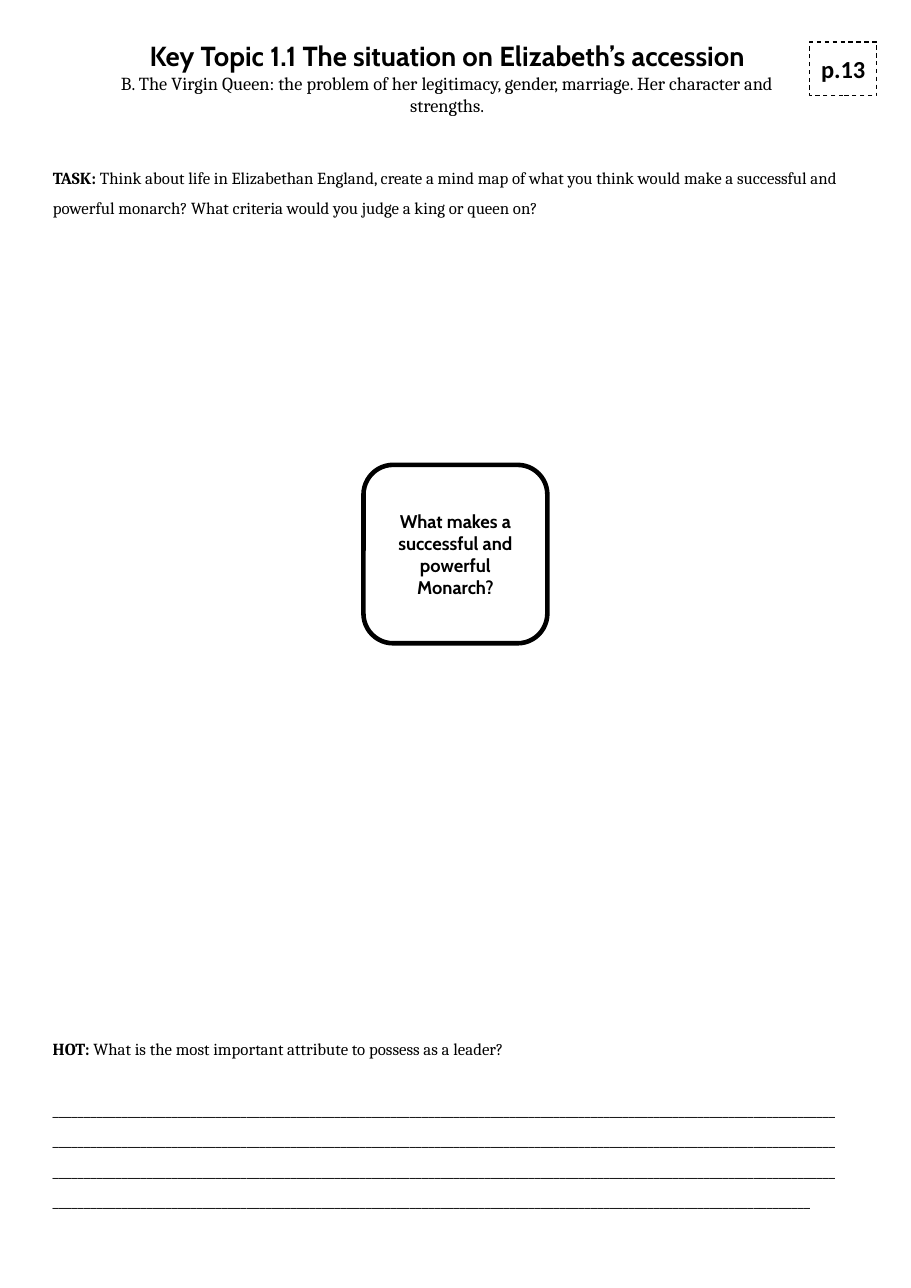
from dataclasses import dataclass

from pptx import Presentation
from pptx.dml.color import RGBColor
from pptx.enum.dml import MSO_LINE
from pptx.enum.shapes import MSO_SHAPE
from pptx.enum.text import MSO_ANCHOR, MSO_AUTO_SIZE, PP_ALIGN
from pptx.util import Pt

LEFT, CENTER = PP_ALIGN.LEFT, PP_ALIGN.CENTER
TOP, MIDDLE = MSO_ANCHOR.TOP, MSO_ANCHOR.MIDDLE
FIXED, GROW = MSO_AUTO_SIZE.NONE, MSO_AUTO_SIZE.SHAPE_TO_FIT_TEXT
RECT, ROUND = MSO_SHAPE.RECTANGLE, MSO_SHAPE.ROUNDED_RECTANGLE
DASH = MSO_LINE.DASH

TITLE_ONLY = 5
RULE_MARKS = 496


@dataclass(frozen=True)
class Theme:
    ink: RGBColor = RGBColor(0, 0, 0)
    paper: RGBColor = RGBColor(255, 255, 255)
    head: str = "Cabin"
    body: str = "Cambria"
    label: str = "Calibri"
    large: int = 18
    medium: int = 16
    normal: int = 12
    small: int = 11


def write(shape, paras, ink, align=LEFT, anchor=TOP, fit=FIXED, inset=None,
          spacing=None, gap=0):
    """Fill a shape with paragraphs, each a list of (text, font, size, bold)."""
    frame = shape.text_frame
    frame.word_wrap = True
    frame.auto_size = fit
    frame.vertical_anchor = anchor
    if inset is not None:
        frame.margin_left = frame.margin_right = Pt(inset)
        frame.margin_top = frame.margin_bottom = Pt(inset)
    for i, runs in enumerate(paras):
        para = frame.add_paragraph() if i else frame.paragraphs[0]
        para.alignment = align
        para.space_before = Pt(gap if i else 0)
        if spacing:
            para.line_spacing = spacing
        for text, name, size, bold in runs:
            run = para.add_run()
            run.text = text
            font = run.font
            font.name, font.size, font.bold = name, Pt(size), bold
            font.color.rgb = ink


class Sheet:
    def __init__(self, slide, theme):
        self.slide = slide
        self.theme = theme

    def title(self, box, paras):
        shape = self.slide.shapes.title
        shape.left, shape.top, shape.width, shape.height = map(Pt, box)
        write(shape, paras, self.theme.ink, align=CENTER, anchor=MIDDLE,
              inset=7.2)

    def text(self, box, paras, **style):
        shape = self.slide.shapes.add_textbox(*map(Pt, box))
        write(shape, paras, self.theme.ink, **style)

    def panel(self, kind, box, run, weight, dash=None, **style):
        shape = self.slide.shapes.add_shape(kind, *map(Pt, box))
        shape.shadow.inherit = False
        shape.fill.solid()
        shape.fill.fore_color.rgb = self.theme.paper
        shape.line.color.rgb = self.theme.ink
        shape.line.width = Pt(weight)
        if dash:
            shape.line.dash_style = dash
        write(shape, [[run]], self.theme.ink, align=CENTER, anchor=MIDDLE,
              **style)


def main():
    deck = Presentation()
    deck.slide_width, deck.slide_height = Pt(595.44), Pt(841.68)
    look = Theme()
    sheet = Sheet(deck.slides.add_slide(deck.slide_layouts[TITLE_ONLY]), look)

    def prompt(tag, text):
        return [(tag, look.body, look.small, True),
                (text, look.body, look.small, False)]

    sheet.title((55.4, 26.6, 473.8, 48.2), [
        [("Key Topic 1.1 The situation on Elizabeth’s accession",
          look.head, look.large, True)],
        [("B. The Virgin Queen: the problem of her legitimacy, gender, "
          "marriage. Her character and strengths.",
          look.body, look.normal, False)],
    ])
    sheet.panel(RECT, (529.2, 27.4, 43.9, 35.3),
                ("p.13", look.label, look.medium, True),
                0.75, DASH, inset=7.2)
    sheet.text((27.4, 99.4, 545.8, 47.5), [
        prompt("TASK: ",
               "Think about life in Elizabethan England, create a mind map of "
               "what you think would make a successful and powerful monarch? "
               "What criteria would you judge a king or queen on?"),
    ], fit=GROW, spacing=1.5)
    sheet.panel(ROUND, (237.6, 303.8, 120.2, 116.6),
                ("What makes a successful and powerful Monarch?",
                 look.head, look.normal, True), 3)
    sheet.text((27.4, 668.9, 527.8, 124.6), [
        prompt("HOT: ", "What is the most important attribute to possess "
                        "as a leader?"),
        [("_" * RULE_MARKS, look.body, look.small, False)],
    ], fit=GROW, spacing=1.5, gap=19.8)

    deck.save("out.pptx")


if __name__ == "__main__":
    main()
